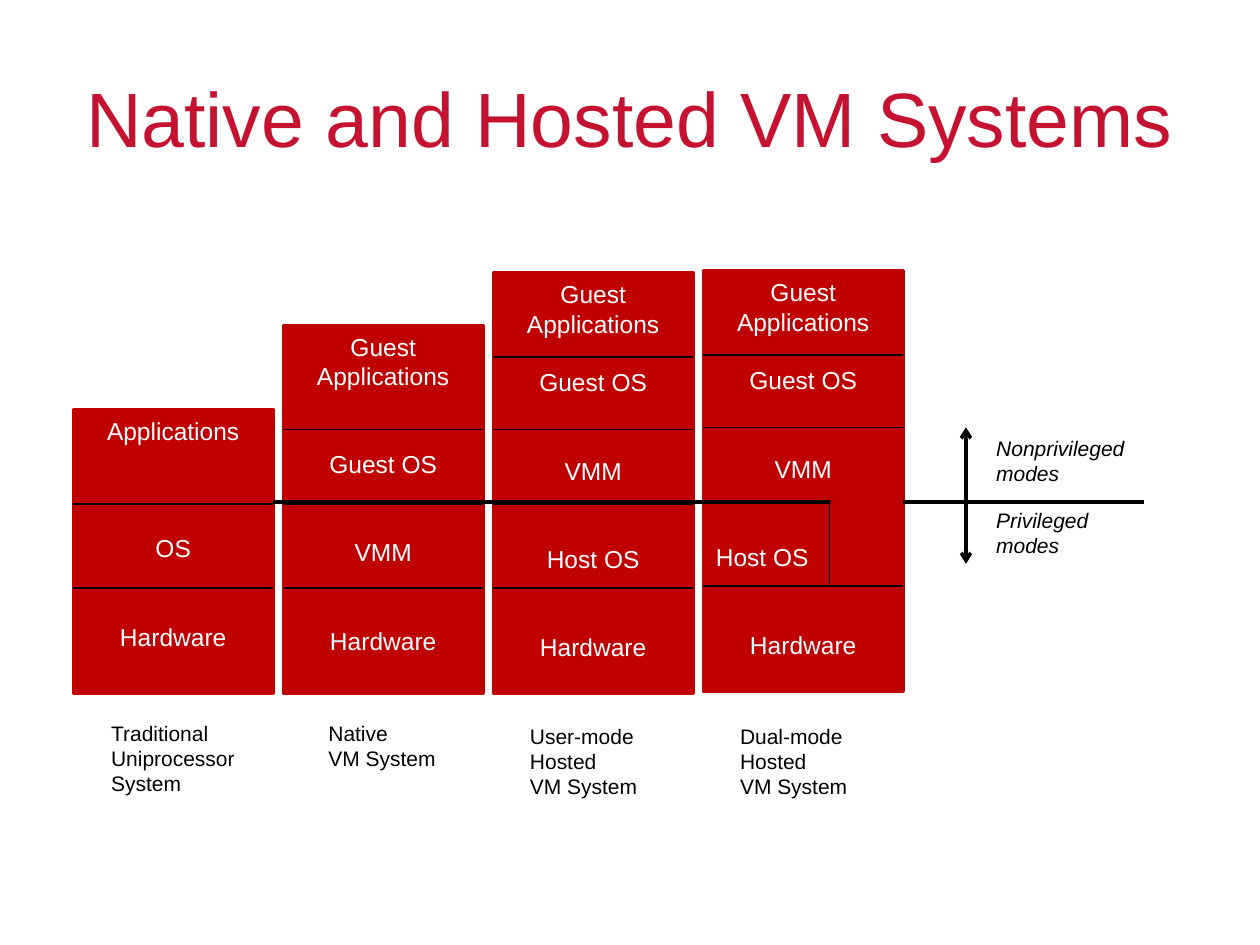
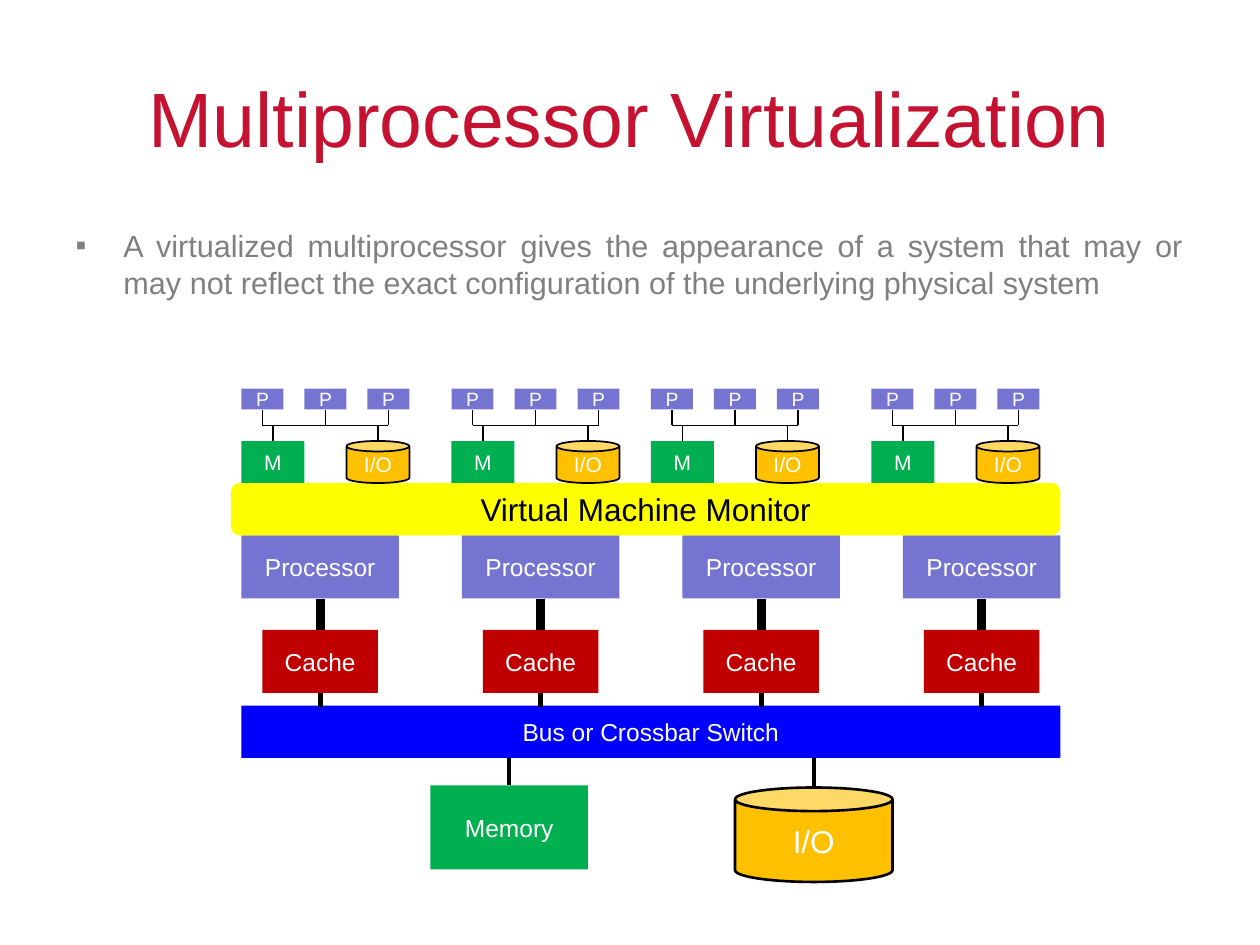
from dataclasses import dataclass

import pptx
import pptx.dml.color
import pptx.enum.shapes
import pptx.enum.text
import pptx.oxml
import pptx.oxml.ns
import pptx.presentation
import pptx.shapes.autoshape
import pptx.shapes.connector
import pptx.slide
import pptx.text.text
import pptx.util

COLS, ROWS = 120, 90
WIDE, HIGH = pptx.util.Inches(10), pptx.util.Inches(7.5)
LEAD = 1.2
HUES = {
    "title": "C41230", "body": "808080", "red": "C00000", "white": "FFFFFF",
    "black": "000000", "blue": "0000FF", "violet": "7575D1",
    "green": "00B050", "gold": "FFC000", "yellow": "FFFF00",
}
KINDS = pptx.enum.shapes.MSO_SHAPE
ALIGN = pptx.enum.text.PP_ALIGN
ANCHOR = pptx.enum.text.MSO_ANCHOR
Slide = pptx.slide.Slide
Shape = pptx.shapes.autoshape.Shape


@dataclass(frozen=True)
class Look:
    """Format of a piece of text."""
    size: float
    hue: str = "white"
    align: ALIGN = ALIGN.CENTER
    italic: bool = False


@dataclass(frozen=True)
class Area:
    """Place on the grid, in columns and rows."""
    left: float
    top: float
    width: float
    height: float


@dataclass(frozen=True)
class Row:
    """Layer name in a tower, with the lines left free above it."""
    text: str
    gap: int = 0
    align: ALIGN = ALIGN.CENTER


@dataclass(frozen=True)
class Tower:
    """Stack of layers, with its dividing rows."""
    top: float
    base: float
    rows: tuple[Row, ...]
    cuts: tuple[float, ...]


@dataclass(frozen=True)
class Note:
    """Free caption made of short lines."""
    left: float
    top: float
    width: float
    lines: tuple[str, ...]
    italic: bool = False


@dataclass(frozen=True)
class Block:
    """Filled box with a centred name."""
    text: str
    area: Area
    fill: str
    size: float = 14
    kind: KINDS = KINDS.RECTANGLE
    line: float = 0
    ink: str = "white"


HOSTED = (Row("Guest Applications"), Row("Guest OS", 1), Row("VMM", 2))
TOWERS = (
    Tower(39, 66, (Row("Applications"), Row("OS", 3), Row("Hardware", 2)), (56, 48)),
    Tower(31, 66, (Row("Guest Applications"), Row("Guest OS", 2), Row("VMM", 2),
                   Row("Hardware", 2)), (56, 48, 40.9)),
    Tower(26, 66, HOSTED + (Row("Host OS", 2), Row("Hardware", 2)),
          (56, 48, 40.9, 34)),
    Tower(25.8, 65.8, HOSTED + (Row("Host OS", 2, ALIGN.LEFT), Row("Hardware", 2)),
          (55.8, 40.7, 33.8)),
)
NOTES = (
    Note(9.4, 68, 14.3, ("Traditional", "Uniprocessor", "System")),
    Note(30.1, 68, 12.7, ("Native", "VM System")),
    Note(49.3, 68.3, 12.7, ("User-mode", "Hosted", "VM System")),
    Note(69.3, 68.3, 12.7, ("Dual-mode", "Hosted", "VM System")),
    Note(93.7, 40.9, 15.2, ("Nonprivileged", "modes"), True),
    Note(93.7, 47.7, 11.8, ("Privileged", "modes"), True),
)


def col(num: float) -> pptx.util.Emu:
    """Turn columns into a length."""
    return pptx.util.Emu(round(WIDE * num / COLS))


def row(num: float) -> pptx.util.Emu:
    """Turn rows into a length."""
    return pptx.util.Emu(round(HIGH * num / ROWS))


def frame(area: Area) -> tuple[pptx.util.Emu, ...]:
    """Turn an area into left, top, width and height."""
    return col(area.left), row(area.top), col(area.width), row(area.height)


def paint(hue: str) -> pptx.dml.color.RGBColor:
    """Find a named colour."""
    return pptx.dml.color.RGBColor.from_string(HUES[hue])


def apply(item: object, form: dict[str, object]) -> None:
    """Set each format value on an item."""
    for name, value in form.items():
        setattr(item, name, value)


def write(para: pptx.text.text._Paragraph, text: str, look: Look, gap: int = 0) -> None:
    """Fill a paragraph, leaving some lines free above it."""
    lead = look.size * LEAD
    apply(para, {"alignment": look.align, "line_spacing": pptx.util.Pt(lead),
                 "space_before": pptx.util.Pt(gap * lead)})
    run = para.add_run()
    run.text = text
    apply(run.font, {"name": "Arial", "size": pptx.util.Pt(look.size),
                     "italic": look.italic})
    run.font.color.rgb = paint(look.hue)


def fill(shape: Shape, rows: tuple[Row, ...], look: Look) -> None:
    """Write one paragraph for each row."""
    text = shape.text_frame
    for num, item in enumerate(rows):
        para = text.add_paragraph() if num else text.paragraphs[0]
        write(para, item.text, Look(look.size, look.hue, item.align, look.italic),
              item.gap)


def panel(slide: Slide, kind: KINDS, area: Area, hue: str, edge: str,
          line: float) -> Shape:
    """Draw a filled shape, with an outline if it has a width."""
    shape = slide.shapes.add_shape(kind, *frame(area))
    shape.shadow.inherit = False
    shape.fill.solid()
    shape.fill.fore_color.rgb = paint(hue)
    if line:
        shape.line.color.rgb = paint(edge)
        shape.line.width = pptx.util.Pt(line)
    else:
        shape.line.fill.background()
    return shape


def block(slide: Slide, item: Block) -> None:
    """Draw a box with its name."""
    shape = panel(slide, item.kind, item.area, item.fill, "black", item.line)
    apply(shape.text_frame, {
        "word_wrap": True, "vertical_anchor": ANCHOR.MIDDLE, "margin_left": 0,
        "margin_right": 0, "margin_top": 0, "margin_bottom": 0})
    fill(shape, (Row(item.text),), Look(item.size, item.ink))


def link(slide: Slide, x1: float, y1: float, x2: float, y2: float,
         size: float = 0.75, hue: str = "black") -> pptx.shapes.connector.Connector:
    """Draw a straight line between two grid points."""
    line = slide.shapes.add_connector(
        pptx.enum.shapes.MSO_CONNECTOR.STRAIGHT, col(x1), row(y1), col(x2), row(y2))
    line.line.color.rgb = paint(hue)
    line.line.width = pptx.util.Pt(size)
    pptx.oxml.xmlchemy.OxmlElement
    line._element.spPr.append(pptx.oxml.parse_xml(
        f'<a:effectLst {pptx.oxml.ns.nsdecls("a")}/>'))
    return line


def tips(line: pptx.shapes.connector.Connector) -> None:
    """Put an arrowhead on both ends."""
    for name in ("headEnd", "tailEnd"):
        line.line._get_or_add_ln().append(pptx.oxml.parse_xml(
            f'<a:{name} {pptx.oxml.ns.nsdecls("a")} type="arrow"/>'))


def place(shape: Shape, area: Area, anchor: ANCHOR) -> None:
    """Move a placeholder and set its text frame."""
    apply(shape, dict(zip(("left", "top", "width", "height"), frame(area))))
    apply(shape.text_frame, {"word_wrap": True, "vertical_anchor": anchor,
                             "auto_size": pptx.enum.text.MSO_AUTO_SIZE.NONE})


def start(deck: pptx.presentation.Presentation, kind: int, title: str) -> Slide:
    """Add a slide with its title."""
    slide = deck.slides.add_slide(deck.slide_layouts[kind])
    head = slide.shapes.title
    place(head, Area(6, 3.6, 108, 15), ANCHOR.MIDDLE)
    fill(head, (Row(title),), Look(44, "title"))
    return slide


def point(shape: Shape, text: str) -> None:
    """Write a justified bullet into the body placeholder."""
    place(shape, Area(6, 21, 108, 8), ANCHOR.TOP)
    para = shape.text_frame.paragraphs[0]
    form = para._p.get_or_add_pPr()
    dent = pptx.util.Inches(0.38)
    form.set("marL", str(dent))
    form.set("indent", str(-dent))
    form.append(pptx.oxml.parse_xml(
        f'<a:buChar {pptx.oxml.ns.nsdecls("a")} char="▪"/>'))
    write(para, text, Look(17.5, "body", ALIGN.JUSTIFY))


def tower(slide: Slide, left: float, item: Tower) -> None:
    """Draw a stack of layers and its dividers."""
    area = Area(left, item.top, 19, item.base - item.top)
    shape = panel(slide, KINDS.RECTANGLE, area, "red", "red", 2)
    apply(shape.text_frame, {"word_wrap": True, "vertical_anchor": ANCHOR.TOP})
    fill(shape, item.rows, Look(14))
    for cut in item.cuts:
        link(slide, left, cut, left + 19, cut)


def note(slide: Slide, item: Note) -> None:
    """Write a caption."""
    area = Area(item.left, item.top, item.width, 1.2 + 2.42 * len(item.lines))
    shape = slide.shapes.add_textbox(*frame(area))
    shape.text_frame.word_wrap = False
    fill(shape, tuple(Row(text, 0, ALIGN.LEFT) for text in item.lines),
         Look(12, "black", italic=item.italic))


def guest(slide: Slide, left: float) -> None:
    """Draw one virtual machine with its wiring."""
    block(slide, Block("M", Area(left, 42, 6, 4), "green", 12))
    block(slide, Block("I/O", Area(left + 10, 42, 6, 4), "gold", 12, KINDS.CAN, 1))
    link(slide, left + 2, 40.5, left + 14, 40.5)
    for step in (3, 13):
        link(slide, left + step, 40.5, left + step, 42)
    for step in (0, 6, 12):
        link(slide, left + step + 2, 40.5, left + step + 2, 39)
        block(slide, Block("P", Area(left + step, 37, 4, 2), "violet", 11))


def systems(deck: pptx.presentation.Presentation) -> None:
    """Build the slide that compares the systems."""
    slide = start(deck, 5, "Native and Hosted VM Systems")
    for num, item in enumerate(TOWERS):
        tower(slide, 7 + 20 * num, item)
    link(slide, 67, 47.8, 79, 47.8)
    link(slide, 79, 47.8, 79, 55.8)
    for item in NOTES:
        note(slide, item)
    tips(link(slide, 92, 40.7, 92, 53.7, 2))
    link(slide, 26, 47.8, 109, 47.8, 2)
    link(slide, 79.1, 47.8, 86, 48, 8, "red")


def multi(deck: pptx.presentation.Presentation) -> None:
    """Build the slide on virtualized multiprocessors."""
    slide = start(deck, 1, "Multiprocessor Virtualization")
    point(slide.placeholders[1],
          "A virtualized multiprocessor gives the appearance of a system that may or "
          "may not reflect the exact configuration of the underlying physical system")
    block(slide, Block("Bus or Crossbar Switch", Area(23, 67.2, 78, 5), "blue"))
    block(slide, Block("Memory", Area(41, 74.8, 15, 8), "green"))
    block(slide, Block("I/O", Area(70, 75, 15, 9), "gold", 18, KINDS.CAN, 1.5))
    for num in range(4):
        left = 23 + 21 * num
        block(slide, Block("Processor", Area(left, 51, 15, 6), "violet"))
        block(slide, Block("Cache", Area(left + 2, 60, 11, 6), "red"))
        link(slide, left + 7.5, 57, left + 7.5, 60, 5)
        link(slide, left + 7.5, 66, left + 7.5, 67.3, 3)
    for spot, base in ((48.5, 74.8), (77.5, 75)):
        link(slide, spot, 72.2, spot, base, 2.5)
    block(slide, Block("Virtual Machine Monitor", Area(22, 46, 79, 5), "yellow", 18,
                       KINDS.ROUNDED_RECTANGLE, ink="black"))
    for left in (23, 43, 62, 83):
        guest(slide, left)


def main() -> None:
    """Build and save the deck."""
    deck = pptx.Presentation()
    apply(deck, {"slide_width": WIDE, "slide_height": HIGH})
    systems(deck)
    multi(deck)
    deck.save("out.pptx")


if __name__ == "__main__":
    main()
